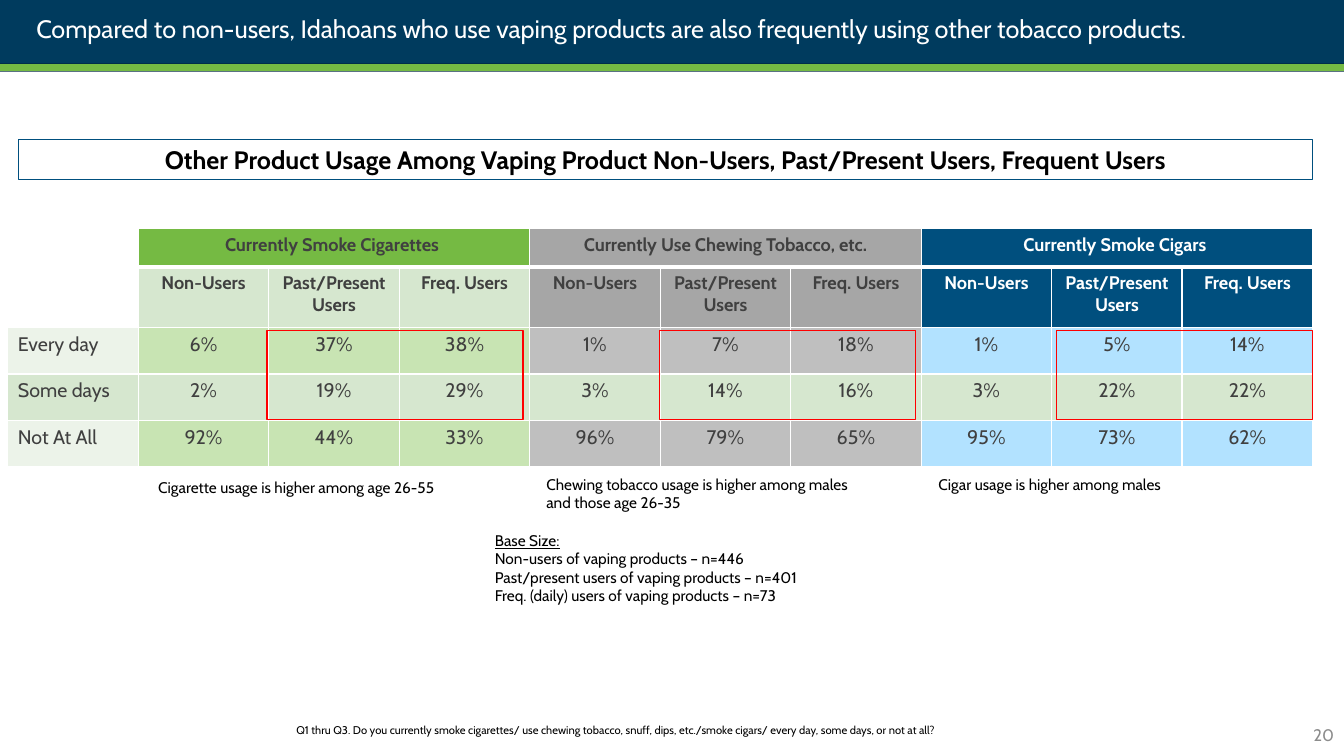
import lxml.etree
import pptx
import pptx.dml.color
import pptx.enum.shapes
import pptx.enum.text
import pptx.oxml
import pptx.oxml.ns
import pptx.util

WIDE = pptx.util.Inches(13.33)
HIGH = pptx.util.Inches(7.5)
FONT = "Cabin"
DARK = "404040"
ALIGN = pptx.enum.text.PP_ALIGN
ANCHOR = pptx.enum.text.MSO_ANCHOR
qn = pptx.oxml.ns.qn

PALE = "D6E7CF"
GROUPS = [
    ("Currently Smoke Cigarettes ", "75BA43", PALE, "C8E4B3", DARK),
    ("Currently Use Chewing Tobacco, etc.", "A6A6A6", "A6A6A6", "BFBFBF", DARK),
    ("Currently Smoke Cigars ", "004F7E", "004F7E", "B2E2FF", "FFFFFF"),
]
USERS = ["Non-Users", "Past/Present Users", "Freq. Users"]
USAGE = [
    ("Every day", [6, 37, 38, 1, 7, 18, 1, 5, 14]),
    ("Some days", [2, 19, 29, 3, 14, 16, 3, 22, 22]),
    ("Not At All", [92, 44, 33, 96, 79, 65, 95, 73, 62]),
]
ROWS = [5.07, 8, 6.13, 6.13, 6.13]
COLUMN = 9.71


def color(code):
    return pptx.dml.color.RGBColor.from_string(code)


def across(share):
    return round(WIDE * share / 100)


def down(share):
    return round(HIGH * share / 100)


def place(left, top, width, height):
    return across(left), down(top), across(width), down(height)


def write(para, text, size, code="000000", bold=False, align=ALIGN.LEFT, under=False):
    para.alignment = align
    run = para.add_run()
    run.text = text
    font = run.font
    font.name, font.size = FONT, pptx.util.Pt(size)
    font.bold, font.underline = bold, under
    font.color.rgb = color(code)


def label(slide, area, lines, size, anchor=ANCHOR.TOP, **style):
    frame = slide.shapes.add_textbox(*place(*area)).text_frame
    frame.word_wrap = True
    frame.vertical_anchor = anchor
    for index, line in enumerate(lines):
        para = frame.add_paragraph() if index else frame.paragraphs[0]
        write(para, line, size, **style)
    return frame


def box(slide, area, fill=None, line=None, width=1):
    shape = slide.shapes.add_shape(
        pptx.enum.shapes.MSO_SHAPE.RECTANGLE, *place(*area))
    shape.shadow.inherit = False
    if fill:
        shape.fill.solid()
        shape.fill.fore_color.rgb = color(fill)
    else:
        shape.fill.background()
    if line:
        shape.line.color.rgb = color(line)
        shape.line.width = pptx.util.Pt(width)
    else:
        shape.line.fill.background()
    return shape


def header(slide, text):
    box(slide, (0, 0, 100, 9.47), fill="00273F")
    box(slide, (0, 0, 100, 8.4), fill="003B5E")
    title = slide.shapes.title
    title.left, title.top, title.width, title.height = place(1.95, 1.07, 96.85, 5.33)
    frame = title.text_frame
    frame.word_wrap = True
    frame.auto_size = pptx.enum.text.MSO_AUTO_SIZE.NONE
    frame.vertical_anchor = ANCHOR.TOP
    write(frame.paragraphs[0], text, 18, "FFFFFF")
    slide.shapes.element.append(title.element)


def stripe(slide, level):
    line = slide.shapes.add_connector(
        pptx.enum.shapes.MSO_CONNECTOR.STRAIGHT, 0, down(level), WIDE, down(level))
    line.line.color.rgb = color("75BA43")
    line.line.width = pptx.util.Pt(4.5)
    lxml.etree.SubElement(line.element.spPr, qn("a:effectLst"))


def border(cell, row):
    widths = {"L": 1, "R": 1, "T": 3 if row == 1 else 1, "B": 1 if row else 3}
    props = cell._tc.get_or_add_tcPr()
    for index, (side, width) in enumerate(widths.items()):
        edge = lxml.etree.Element(qn("a:ln" + side), w=str(pptx.util.Pt(width)))
        solid = lxml.etree.SubElement(edge, qn("a:solidFill"))
        lxml.etree.SubElement(solid, qn("a:srgbClr"), val="FFFFFF")
        props.insert(index, edge)


def paint(cell, row, fill):
    if fill:
        cell.fill.solid()
        cell.fill.fore_color.rgb = color(fill)
    else:
        cell.fill.background()
    border(cell, row)


def shrink(cell):
    para = cell.text_frame.paragraphs[0]._p
    lxml.etree.SubElement(para, qn("a:endParaRPr"), sz="1300")


def stub(grid):
    for row in range(2):
        paint(grid.cell(row, 0), row, None)
        shrink(grid.cell(row, 0))
    for row, (name, _) in enumerate(USAGE, 2):
        cell = grid.cell(row, 0)
        paint(cell, row, PALE if row == 3 else "ECF3E9")
        write(cell.text_frame.paragraphs[0], name, 14, DARK)


def group(grid, index):
    name, top, sub, body, ink = GROUPS[index]
    first = 1 + index * len(USERS)
    for step, user in enumerate(USERS):
        col = first + step
        paint(grid.cell(0, col), 0, top)
        if step:
            shrink(grid.cell(0, col))
        head = grid.cell(1, col)
        paint(head, 1, sub)
        write(head.text_frame.paragraphs[0], user, 13, ink, True, ALIGN.CENTER)
        for row, (_, values) in enumerate(USAGE, 2):
            cell = grid.cell(row, col)
            paint(cell, row, PALE if row == 3 else body)
            write(cell.text_frame.paragraphs[0], f"{values[col - 1]}%", 14, DARK,
                  align=ALIGN.CENTER)
    write(grid.cell(0, first).text_frame.paragraphs[0], name, 13, ink, True, ALIGN.CENTER)
    grid.cell(0, first).merge(grid.cell(0, first + len(USERS) - 1))


def matrix(slide):
    count = 1 + len(GROUPS) * len(USERS)
    area = place(0.58, 30.27, COLUMN * count, sum(ROWS))
    grid = slide.shapes.add_table(len(ROWS), count, *area).table
    grid.first_row = grid.horz_banding = False
    for col in grid.columns:
        col.width = across(COLUMN)
    for row, share in zip(grid.rows, ROWS):
        row.height = down(share)
    stub(grid)
    for index in range(len(GROUPS)):
        group(grid, index)


def main():
    deck = pptx.Presentation()
    deck.slide_width, deck.slide_height = WIDE, HIGH
    slide = deck.slides.add_slide(deck.slide_layouts[5])
    header(slide, "Compared to non-users, Idahoans who use vaping products are "
                  "also frequently using other tobacco products.")
    label(slide, (21.31, 95.07, 56.26, 3.2),
          ["Q1 thru Q3. Do you currently smoke cigarettes/ use chewing tobacco, snuff, "
           "dips, etc./smoke cigars/ every day, some days, or not at all?"], 8)
    label(slide, (77.5, 94.53, 22.5, 5.33), ["20"], 12, ANCHOR.MIDDLE,
          code="8C8C8C", align=ALIGN.RIGHT)
    stripe(slide, 8.93)
    matrix(slide)
    banner = box(slide, (1.35, 18.4, 96.32, 5.33), line="004F7E", width=0.75)
    banner.text_frame.vertical_anchor = ANCHOR.TOP
    write(banner.text_frame.paragraphs[0],
          "Other Product Usage Among Vaping Product Non-Users, Past/Present Users, "
          "Frequent Users", 18, bold=True, align=ALIGN.CENTER)
    base = label(slide, (36.08, 69.6, 29.48, 11.2),
                 ["Base Size:", "Non-users of vaping products – n=446",
                  "Past/present users of vaping products – n=401",
                  "Freq. (daily) users of vaping products – n=73"], 11)
    base.paragraphs[0].runs[0].font.underline = True
    notes = [
        ((39.91, 62.13, 25.66, 6.27),
         "Chewing tobacco usage is higher among males and those age 26-35"),
        ((11.03, 62.53, 27.91, 3.87), "Cigarette usage is higher among age 26-55"),
        ((69.09, 62.13, 27.91, 3.87), "Cigar usage is higher among males"),
    ]
    for area, text in notes:
        label(slide, area, [text], 11)
    for left in (19.88, 49.06, 78.62):
        box(slide, (left, 43.73, 19.05, 11.73), line="FF0000")
    deck.save("out.pptx")


if __name__ == "__main__":
    main()
